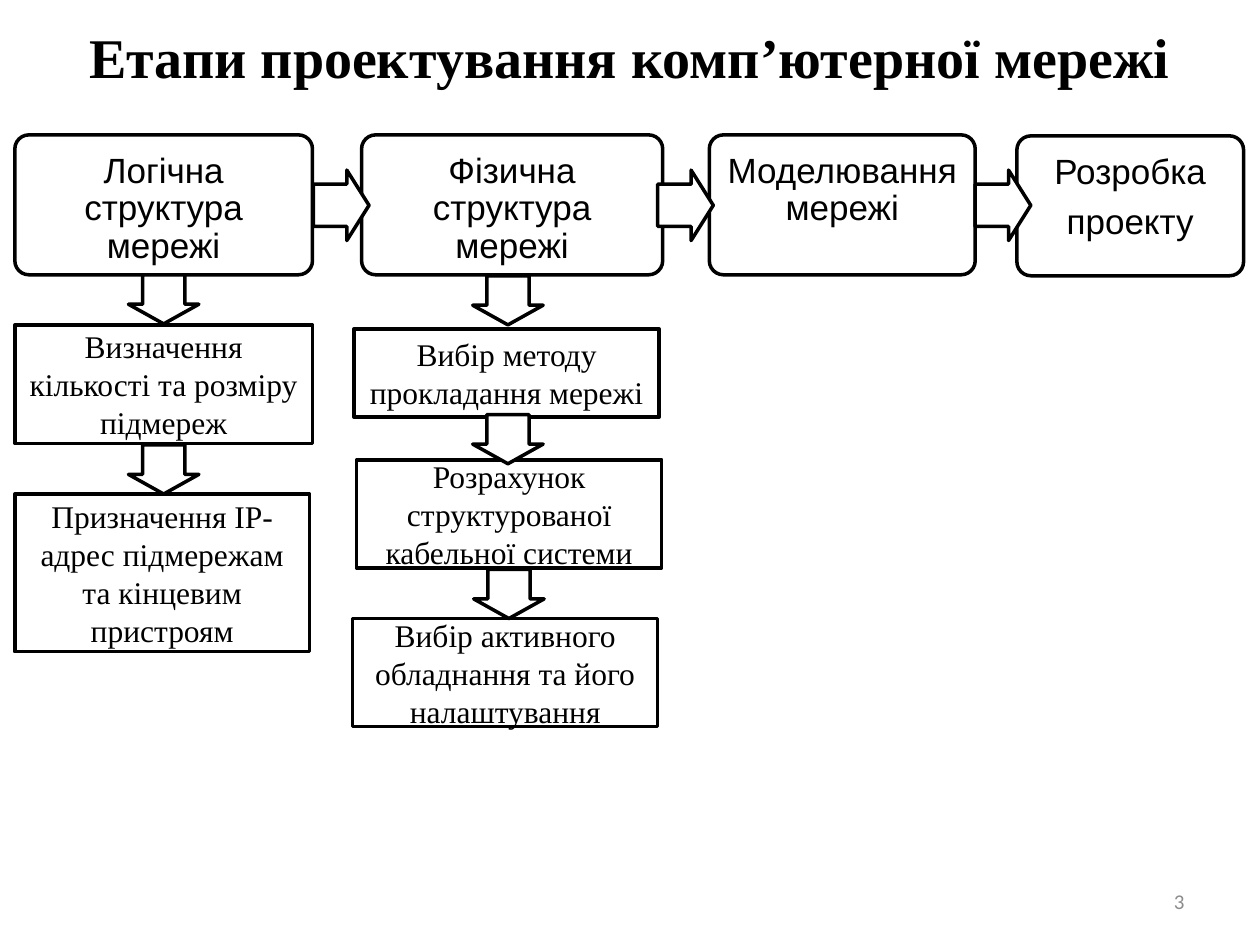
"""Build the slide on the stages of computer network design."""
from pptx import Presentation
from pptx.dml.color import RGBColor
from pptx.enum.shapes import MSO_SHAPE
from pptx.enum.text import MSO_ANCHOR, PP_ALIGN
from pptx.util import Cm, Pt

BLACK = RGBColor(0x00, 0x00, 0x00)
WHITE = RGBColor(0xFF, 0xFF, 0xFF)
GRAY = RGBColor(0x8C, 0x8C, 0x8C)
SERIF = "Times New Roman"


def add_outlined(kind, left, top, width, height):
    sp = s.shapes.add_shape(kind, Cm(left), Cm(top), Cm(width), Cm(height))
    sp.shadow.inherit = False
    sp.fill.solid()
    sp.fill.fore_color.rgb = WHITE
    sp.line.color.rgb = BLACK
    sp.line.width = Pt(2)
    return sp


def write(tf, text, font, size, color=BLACK, align=PP_ALIGN.CENTER, bold=False):
    tf.word_wrap = True
    tf.text = text
    for p in tf.paragraphs:
        p.alignment = align
        for r in p.runs:
            r.font.name = font
            r.font.size = Pt(size)
            r.font.bold = bold
            r.font.color.rgb = color


prs = Presentation()
prs.slide_width, prs.slide_height = Cm(25.4), Cm(19.05)
s = prs.slides.add_slide(prs.slide_layouts[5])

title = s.shapes.title
title.left, title.top, title.width, title.height = Cm(0), Cm(0.33), Cm(25.4), Cm(1.63)
title.text_frame.vertical_anchor = MSO_ANCHOR.TOP
write(title.text_frame, "Етапи проектування комп’ютерної мережі", SERIF, 32, bold=True)

steps = [
    (0.3, 6.55, 6, 2.39, "Визначення кількості та розміру підмереж"),
    (0.3, 9.96, 5.94, 3.18, "Призначення IP-адрес підмережам та кінцевим пристроям"),
    (7.14, 6.63, 6.15, 1.78, "Вибір методу прокладання мережі"),
    (7.19, 9.27, 6.15, 2.18, "Розрахунок структурованої кабельної системи"),
    (7.11, 12.47, 6.15, 2.18, "Вибір активного обладнання та його налаштування"),
]
for left, top, width, height, text in steps:
    sp = add_outlined(MSO_SHAPE.RECTANGLE, left, top, width, height)
    sp.text_frame.vertical_anchor = MSO_ANCHOR.MIDDLE
    write(sp.text_frame, text, SERIF, 18)

stages = [
    (0.3, 2.72, 6, "Логічна структура мережі"),
    (7.29, 2.72, 6.07, "Фізична структура мережі"),
    (14.3, 2.72, 5.36, "Моделювання мережі"),
    (20.5, 2.74, 4.57, "Розробка\nпроекту"),
]
for left, top, width, text in stages:
    sp = add_outlined(MSO_SHAPE.ROUNDED_RECTANGLE, left, top, width, 2.82)
    sp.adjustments[0] = 0.1
    tf = sp.text_frame
    tf.vertical_anchor = MSO_ANCHOR.TOP
    tf.margin_left = tf.margin_right = tf.margin_top = Cm(0.28)
    tf.margin_bottom = Cm(1.07)
    write(tf, text, "Arial", 20)
    for p in tf.paragraphs:
        p.line_spacing = 0.9
        p.space_after = Pt(7)

right_arrows = [(MSO_SHAPE.RIGHT_ARROW, left, 3.43, 1.12, 1.42)
                for left in (6.32, 13.26, 19.66)]
down_arrows = [(MSO_SHAPE.DOWN_ARROW, left, top, 1.42, 0.99)
               for left, top in ((2.59, 5.54), (2.59, 8.97), (9.53, 5.56),
                                 (9.53, 8.36), (9.55, 11.48))]
for arrow in right_arrows + down_arrows:
    sp = add_outlined(*arrow)
    sp.adjustments[0] = 0.6
    sp.adjustments[1] = 0.4

number = s.shapes.add_textbox(Cm(18.21), Cm(17.65), Cm(5.92), Cm(1.02))
number.text_frame.vertical_anchor = MSO_ANCHOR.MIDDLE
write(number.text_frame, "3", "Calibri", 12, GRAY, PP_ALIGN.RIGHT)

prs.save("out.pptx")
